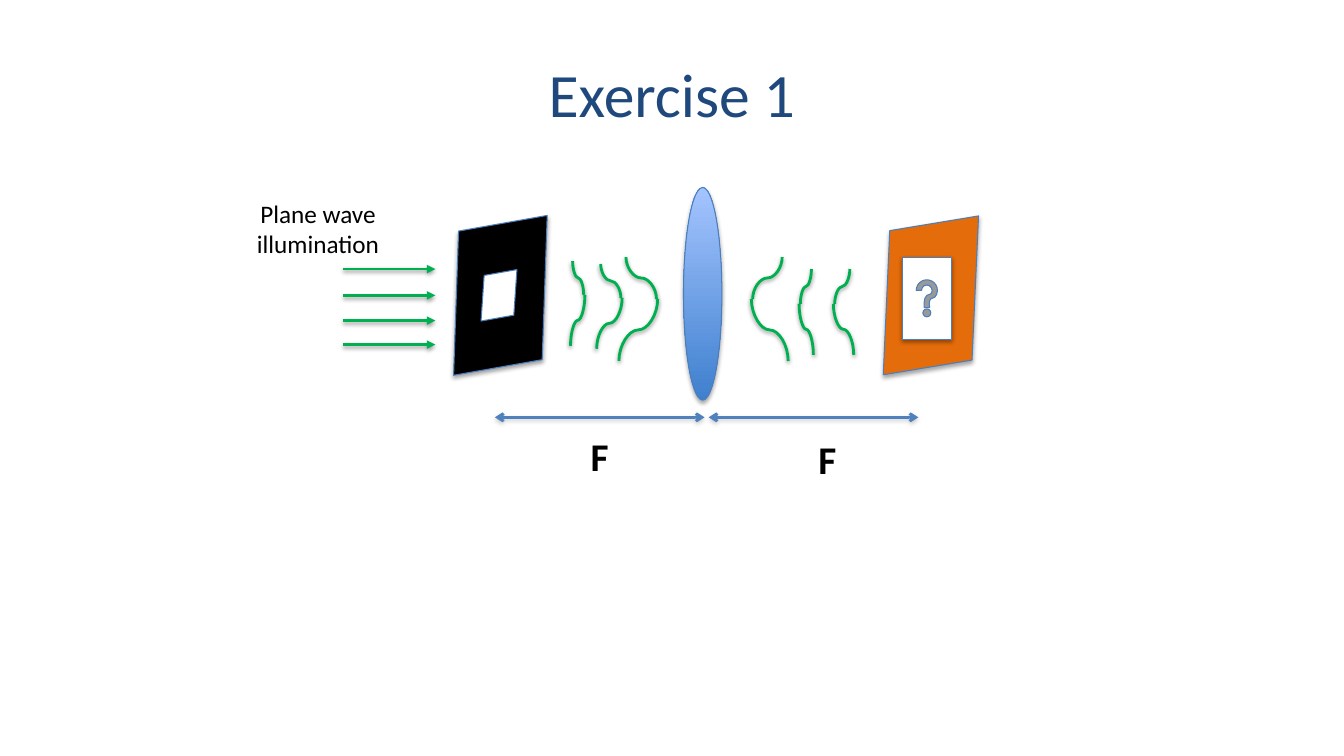
from dataclasses import dataclass

import pptx
import pptx.dml.color
import pptx.enum.shapes
import pptx.enum.text
import pptx.oxml.ns
import pptx.util
from lxml import etree

Pt = pptx.util.Pt
qn = pptx.oxml.ns.qn
Kind = pptx.enum.shapes.MSO_SHAPE
Wire = pptx.enum.shapes.MSO_CONNECTOR
Align = pptx.enum.text.PP_ALIGN
GREEN, BLUE, EDGE = "00B050", "4F81BD", "4B7EBC"


@dataclass
class Plate:
    kind: Kind
    left: float
    top: float
    width: float
    height: float
    fill: str
    turn: float = 0


@dataclass
class Wave:
    """One bent wave front: x and y at its top, middle and foot."""
    top_x: float
    mid_x: float
    foot_x: float
    top_y: float
    mid_y: float
    foot_y: float


@dataclass
class Label:
    text: str
    left: float
    top: float
    width: float
    height: float
    size: float
    bold: bool = False
    align: Align = Align.LEFT


PLATES = [
    Plate(Kind.PARALLELOGRAM, 314.6, 160.6, 85.7, 100.8, "000000", 350),
    Plate(Kind.PARALLELOGRAM, 622.1, 160.6, 85.7, 100.8, "E46C0A", 350.6),
    Plate(Kind.OVAL, 488.2, 133.9, 27.4, 151.9, ""),
    Plate(Kind.PARALLELOGRAM, 340.6, 195.1, 31.7, 31.7, "FFFFFF", 349.9),
]
HELP = Plate(Kind.ACTION_BUTTON_HELP, 644.4, 183.6, 35.3, 59, "FFFFFF")
RAYS = [192.2, 211, 229, 246.2]
WAVES = [
    Wave(409, 416.9, 407.5, 186.5, 210.6, 247),
    Wave(429.1, 443.5, 426.2, 188.6, 212.8, 249.1),
    Wave(447.1, 468.9, 442.1, 183.6, 213.5, 257.8),
    Wave(558.7, 537.6, 563, 183.6, 213.5, 257.8),
    Wave(579.6, 571.7, 581, 192.2, 217.1, 253.4),
    Wave(607, 596.2, 609.8, 192.2, 217.1, 253.4),
]
LABELS = [
    Label("F", 414.7, 305.3, 27.4, 41, 28, True),
    Label("F", 577.4, 307.4, 27.4, 41, 28, True),
    Label("Plane wave\nillumination", 175.7, 138.2, 103, 51, 18, align=Align.CENTER),
]


def hue(code: str) -> pptx.dml.color.RGBColor:
    return pptx.dml.color.RGBColor.from_string(code)


def shade(shape, color: str, alpha: int, dist: float) -> None:
    """Add a soft drop shadow straight below the shape."""
    effects = etree.SubElement(shape.element.spPr, qn("a:effectLst"))
    drop = etree.SubElement(effects, qn("a:outerShdw"), blurRad=str(Pt(3.1)),
                            dist=str(Pt(dist)), dir="5400000", rotWithShape="0")
    tint = etree.SubElement(drop, qn("a:srgbClr"), val=color)
    etree.SubElement(tint, qn("a:alpha"), val=str(alpha * 1000))


def add_plate(shapes, plate: Plate) -> None:
    shape = shapes.add_shape(plate.kind, Pt(plate.left), Pt(plate.top),
                             Pt(plate.width), Pt(plate.height))
    shape.rotation = plate.turn
    if plate.fill:
        shape.fill.solid()
        shape.fill.fore_color.rgb = hue(plate.fill)
    else:
        shape.fill.gradient()
        shape.fill.gradient_angle = 90
        for stop, code in zip(shape.fill.gradient_stops, ("3F80CE", "A4C4FF")):
            stop.color.rgb = hue(code)
    shape.line.color.rgb = hue(EDGE)
    shape.line.width = Pt(0.75)
    shade(shape, "000000", 35, 1.8)


def add_line(shapes, kind: Wire, x1: float, y1: float, x2: float, y2: float,
             color: str, head: str = "", tail: str = "", shadow: str = "000000"):
    line = shapes.add_connector(kind, Pt(x1), Pt(y1), Pt(x2), Pt(y2))
    line.line.color.rgb = hue(color)
    line.line.width = Pt(2)
    stroke = line.element.spPr.find(qn("a:ln"))
    for tag, tip in (("a:headEnd", head), ("a:tailEnd", tail)):
        if tip:
            etree.SubElement(stroke, qn(tag), type=tip)
    shade(line, shadow, 38, 1.6)
    return line


def add_curve(shapes, x1: float, y1: float, x2: float, y2: float) -> None:
    """Draw an S curve that leaves and arrives upright: a level one turned by 90 degrees."""
    mid_x, mid_y = (x1 + x2) / 2, (y1 + y2) / 2
    half_x, half_y = (x2 - x1) / 2, (y2 - y1) / 2
    curve = add_line(shapes, Wire.CURVE, mid_x - half_y, mid_y + half_x,
                     mid_x + half_y, mid_y - half_x, GREEN)
    curve.element.spPr.find(qn("a:xfrm")).set("rot", "5400000")


def add_wave(shapes, wave: Wave) -> None:
    step = 0.9 if wave.mid_x > wave.top_x else -0.9
    add_curve(shapes, wave.top_x, wave.top_y, wave.mid_x, wave.mid_y)
    add_curve(shapes, wave.mid_x + step, wave.mid_y, wave.foot_x, wave.foot_y)


def style(frame, size: float, color: str, align: Align, bold: bool = False) -> None:
    for para in frame.paragraphs:
        para.alignment = align
        for run in para.runs:
            run.font.name = "Calibri"
            run.font.size = Pt(size)
            run.font.bold = bold
            run.font.color.rgb = hue(color)


def add_label(shapes, label: Label) -> None:
    box = shapes.add_textbox(Pt(label.left), Pt(label.top), Pt(label.width), Pt(label.height))
    frame = box.text_frame
    frame.text = label.text
    frame.word_wrap = False
    frame.auto_size = pptx.enum.text.MSO_AUTO_SIZE.SHAPE_TO_FIT_TEXT
    style(frame, label.size, "000000", label.align, label.bold)


def add_title(title, text: str) -> None:
    title.left, title.top, title.width, title.height = Pt(48), Pt(21.6), Pt(864), Pt(90)
    frame = title.text_frame
    frame.text = text
    frame.vertical_anchor = pptx.enum.text.MSO_ANCHOR.MIDDLE
    style(frame, 44, "1F497D", Align.CENTER)


def main() -> None:
    deck = pptx.Presentation()
    deck.slide_width, deck.slide_height = Pt(960), Pt(540)
    shapes = deck.slides.add_slide(deck.slide_layouts[5]).shapes
    add_title(shapes.title, "Exercise 1")
    for plate in PLATES:
        add_plate(shapes, plate)
    rays = shapes.add_group_shape().shapes
    for y in RAYS:
        add_line(rays, Wire.STRAIGHT, 244.8, y, 311, y, GREEN, tail="triangle")
    for wave in WAVES:
        add_wave(shapes.add_group_shape().shapes, wave)
    add_plate(shapes, HELP)
    for x in (353.5, 506.2):
        add_line(shapes, Wire.STRAIGHT, x, 298.1, x + 149.8, 298.1, BLUE,
                 "arrow", "arrow", "808080")
    for label in LABELS:
        add_label(shapes, label)
    deck.save("out.pptx")


if __name__ == "__main__":
    main()
